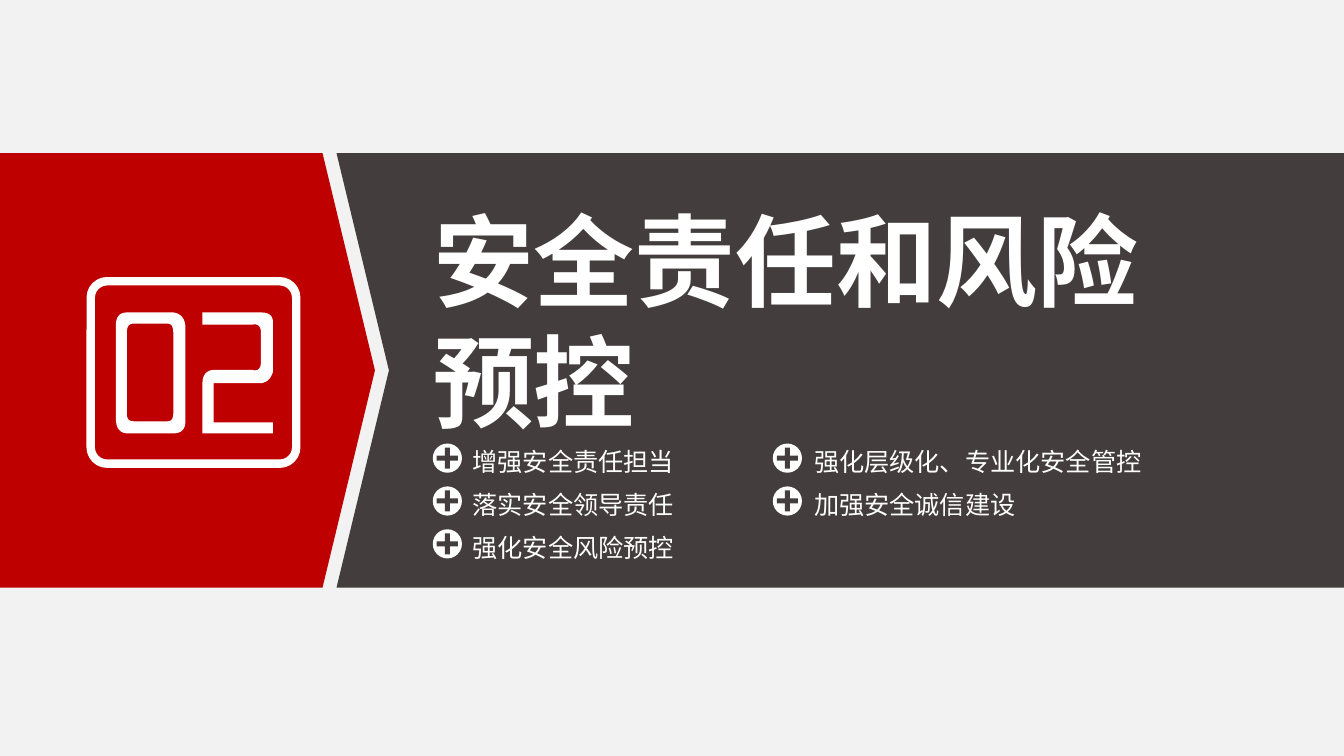
import pptx
import pptx.util
import pptx.dml.color
import pptx.enum.shapes
import pptx.enum.text
import pptx.oxml.ns
import lxml.etree

COLORS = {"paper": "F2F2F2", "red": "BE0000", "dark": "433E3D", "white": "FFFFFF"}
FONT = "Noto Sans CJK SC"
SHAPE = pptx.enum.shapes.MSO_SHAPE

deck = pptx.Presentation()
deck.slide_width = pptx.util.Inches(13.34)
deck.slide_height = pptx.util.Inches(7.5)
column = deck.slide_width / 100
row = deck.slide_height / 100
dot = deck.slide_width / 1334  # fine grid for the digits
page = deck.slides.add_slide(deck.slide_layouts[3])


def paint(shape, fill):
    shape.shadow.inherit = False
    shape.line.fill.background()
    shape.fill.solid()
    shape.fill.fore_color.rgb = pptx.dml.color.RGBColor.from_string(COLORS[fill])
    return shape


def draw_outline(shapes, contours, fill, unit_x, unit_y, left=0, top=0):
    """Points are (x, y); six numbers are a Bezier curve, drawn in short steps."""
    builder = None
    for contour in contours:
        points = []
        for point in contour:
            if len(point) == 2:
                points.append(point)
                continue
            knots = [points[-1], point[:2], point[2:4], point[4:]]
            for step in range(1, 9):
                t = step / 8
                weights = ((1 - t) ** 3, 3 * t * (1 - t) ** 2, 3 * t * t * (1 - t), t ** 3)
                points.append(tuple(sum(w * k[axis] for w, k in zip(weights, knots))
                                    for axis in (0, 1)))
        points = [((left + x) * unit_x, (top + y) * unit_y) for x, y in points]
        if builder is None:
            builder = shapes.build_freeform(*points[0])
        else:
            builder.move_to(*points[0])
        builder.add_line_segments(points[1:], close=True)
    return paint(builder.convert_to_shape(), fill)


# Background and the two bands, which share an arrow-shaped edge
page.background.fill.solid()
page.background.fill.fore_color.rgb = pptx.dml.color.RGBColor.from_string(COLORS["paper"])
band_top, band_middle, band_bottom = 20.27, 49, 77.73
for fill, side, edge, tip in (("red", 0, 24, 27.9), ("dark", 100, 25.04, 28.94)):
    band = [(side, band_top), (edge, band_top), (tip, band_middle),
            (edge, band_bottom), (side, band_bottom)]
    draw_outline(page.shapes, [band], fill, column, row)

# Section number in a rounded frame
badge = page.shapes.add_group_shape()
frame = badge.shapes.add_shape(SHAPE.ROUNDED_RECTANGLE, int(6.75 * column), int(37.2 * row),
                               int(15.29 * column), int(24.13 * row))
frame.adjustments[0] = 0.09
frame.shadow.inherit = False
frame.fill.background()
frame.line.width = pptx.util.Pt(6)
frame.line.color.rgb = pptx.dml.color.RGBColor.from_string(COLORS["white"])

zero = [
    [(0, 13), (0, 105), (0, 115, 4, 120, 12, 120), (57, 120), (65, 120, 69, 116, 69, 108),
     (69, 13), (68, 5, 64, 1, 57, 0), (11, 0), (4, 0, 0, 4, 0, 13)],
    [(51, 108), (18, 108), (13, 108, 11, 106, 11, 101), (11, 19), (11, 14, 13, 11, 18, 11),
     (51, 11), (55, 11, 57, 14, 57, 20), (57, 100), (57, 106, 55, 108, 51, 108)],
]
two = [
    [(0, 70), (0, 62, 4, 57, 12, 57), (49, 57), (53, 58, 55, 57, 56, 56),
     (57, 55, 58, 53, 58, 50), (58, 19), (58, 14, 55, 11, 50, 12), (0, 12), (0, 0), (58, 0),
     (66, 0, 70, 3, 70, 10), (70, 59), (68, 65, 65, 69, 59, 70), (11, 70), (11, 109),
     (70, 109), (70, 120), (0, 120)],
]
for digit, left in ((zero, 115), (two, 201)):
    draw_outline(badge.shapes, digit, "white", dot, dot, left, 310)

# Title and the two lists: lines, left, top, width, height, size, line height, bold
title_lines = ["安全责任和风险预控"]
left_lines = ["增强安全责任担当", "落实安全领导责任", "强化安全风险预控"]
right_lines = ["强化层级化、专业化安全管控", "加强安全诚信建设"]
texts = (
    (title_lines, 32.23, 26.27, 56.67, 32.27, 72, 86.4, True),
    (left_lines, 35.16, 57.41, 19.5, 17, 18, 30.6, False),
    (right_lines, 60.57, 57.41, 28, 17, 18, 30.6, False),
)
frame_format = {"margin_left": 0, "margin_right": 0, "margin_top": 0, "margin_bottom": 0,
                "word_wrap": True, "auto_size": pptx.enum.text.MSO_AUTO_SIZE.NONE,
                "vertical_anchor": pptx.enum.text.MSO_ANCHOR.TOP}
for box, (lines, left, top, width, height, size, pitch, bold) in zip(
        list(page.placeholders), texts):
    box.left, box.top = int(left * column), int(top * row)
    box.width, box.height = int(width * column), int(height * row)
    box.element.getparent().append(box.element)  # in front of the bands
    for name, value in frame_format.items():
        setattr(box.text_frame, name, value)
    box.text_frame.text = "\n".join(lines)
    para_format = {"alignment": pptx.enum.text.PP_ALIGN.LEFT, "space_before": pptx.util.Pt(0),
                   "line_spacing": pptx.util.Pt(pitch)}
    font_format = {"name": FONT, "size": pptx.util.Pt(size), "bold": bold}
    for para in box.text_frame.paragraphs:
        for name, value in para_format.items():
            setattr(para, name, value)
        properties = para._p.get_or_add_pPr()
        properties.set("marL", "0")
        properties.set("indent", "0")
        lxml.etree.SubElement(properties, pptx.oxml.ns.qn("a:buNone"))
        span = para.runs[0]
        for name, value in font_format.items():
            setattr(span.font, name, value)
        span.font.color.rgb = pptx.dml.color.RGBColor.from_string(COLORS["white"])
        east_asian = lxml.etree.SubElement(span._r.get_or_add_rPr(), pptx.oxml.ns.qn("a:ea"))
        east_asian.set("typeface", FONT)

# A plus sign in a disc before every list line
disc_size, plus_size = 2.17 * column, 1.57 * column
inset = (disc_size - plus_size) / 2
for lines, left in ((left_lines, 32.2), (right_lines, 57.5)):
    for index in range(len(lines)):
        x, y = left * column, (58.67 + 5.67 * index) * row
        paint(page.shapes.add_shape(SHAPE.OVAL, int(x), int(y), int(disc_size), int(disc_size)),
              "white")
        plus = page.shapes.add_shape(SHAPE.CROSS, int(x + inset), int(y + inset),
                                     int(plus_size), int(plus_size))
        plus.adjustments[0] = 0.38
        paint(plus, "dark")

deck.save("out.pptx")
